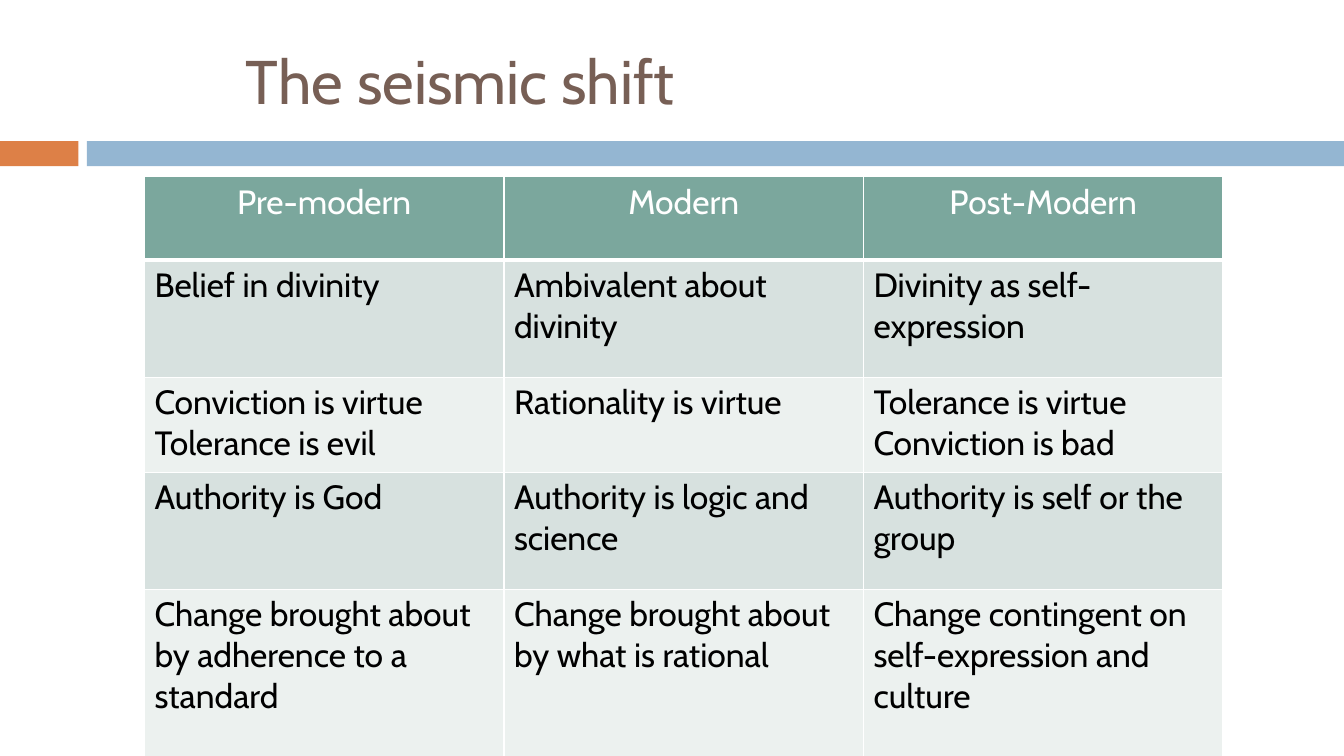
from lxml import etree
from pptx import Presentation
from pptx.dml.color import RGBColor
from pptx.enum.shapes import MSO_SHAPE
from pptx.enum.text import MSO_ANCHOR, MSO_AUTO_SIZE, PP_ALIGN
from pptx.oxml.ns import qn
from pptx.util import Cm, Pt

RECT = MSO_SHAPE.RECTANGLE
LEFT, CENTER = PP_ALIGN.LEFT, PP_ALIGN.CENTER

WHITE = RGBColor(0xFF, 0xFF, 0xFF)
BLACK = RGBColor(0x00, 0x00, 0x00)
BROWN = RGBColor(0x77, 0x5F, 0x55)
ORANGE = RGBColor(0xDD, 0x80, 0x47)
BLUE = RGBColor(0x94, 0xB6, 0xD2)
GREEN = RGBColor(0x7B, 0xA7, 0x9D)
MIST = RGBColor(0xD7, 0xE1, 0xDF)
PALE = RGBColor(0xEC, 0xF1, 0xEF)

ROWS = [
    ("Pre-modern", "Modern", "Post-Modern"),
    ("Belief in divinity", "Ambivalent about divinity",
     "Divinity as self-expression"),
    ("Conviction is virtue\nTolerance is evil", "Rationality is virtue",
     "Tolerance is virtue\nConviction is bad"),
    ("Authority is God", "Authority is logic and science",
     "Authority is self or the group"),
    ("Change brought about by adherence to a standard",
     "Change brought about by what is rational",
     "Change contingent on self-expression and culture"),
]
HEIGHTS = [2.11, 2.95, 2.39, 2.95, 4.22]
WIDTH = 9.06


def add_run(para, text, size, color):
    run = para.add_run()
    run.text = text
    run.font.name = "Cabin"
    run.font.size = Pt(size)
    run.font.color.rgb = color


def add_edge(cell, side, width):
    """Draw one white cell border; call before the cell is filled."""
    line = etree.SubElement(cell._tc.get_or_add_tcPr(), qn("a:ln" + side),
                            w=str(Pt(width)))
    fill = etree.SubElement(line, qn("a:solidFill"))
    etree.SubElement(fill, qn("a:srgbClr"), val=str(WHITE))


deck = Presentation()
deck.slide_width, deck.slide_height = Cm(33.87), Cm(19.05)
slide = deck.slides.add_slide(deck.slide_layouts[5])

# Band under the title
for left, width, color in [(0, 1.98, ORANGE), (2.19, 31.68, BLUE)]:
    bar = slide.shapes.add_shape(RECT, Cm(left), Cm(3.56), Cm(width), Cm(0.63))
    bar.shadow.inherit = False
    bar.fill.solid()
    bar.fill.fore_color.rgb = color
    bar.line.fill.background()

# Title
title = slide.shapes.title
title.left, title.top = Cm(5.94), Cm(0.64)
title.width, title.height = Cm(22.66), Cm(2.74)
frame = title.text_frame
frame.auto_size = MSO_AUTO_SIZE.NONE
frame.vertical_anchor = MSO_ANCHOR.MIDDLE
frame.paragraphs[0].alignment = LEFT
add_run(frame.paragraphs[0], "The seismic shift", 44, BROWN)

# Comparison table
table = slide.shapes.add_table(
    len(ROWS), 3, Cm(3.64), Cm(4.45), Cm(3 * WIDTH), Cm(sum(HEIGHTS))).table
for col in table.columns:
    col.width = Cm(WIDTH)
for r, texts in enumerate(ROWS):
    table.rows[r].height = Cm(HEIGHTS[r])
    head = r == 0
    shade = GREEN if head else MIST if r % 2 else PALE
    for c, text in enumerate(texts):
        cell = table.cell(r, c)
        for side in "LRTB":
            thick = (r, side) in [(0, "B"), (1, "T")]
            add_edge(cell, side, 3 if thick else 1)
        cell.fill.solid()
        cell.fill.fore_color.rgb = shade
        for i, part in enumerate(text.split("\n")):
            frame = cell.text_frame
            para = frame.add_paragraph() if i else frame.paragraphs[0]
            para.alignment = CENTER if head else LEFT
            add_run(para, part, 24, WHITE if head else BLACK)

deck.save("out.pptx")
